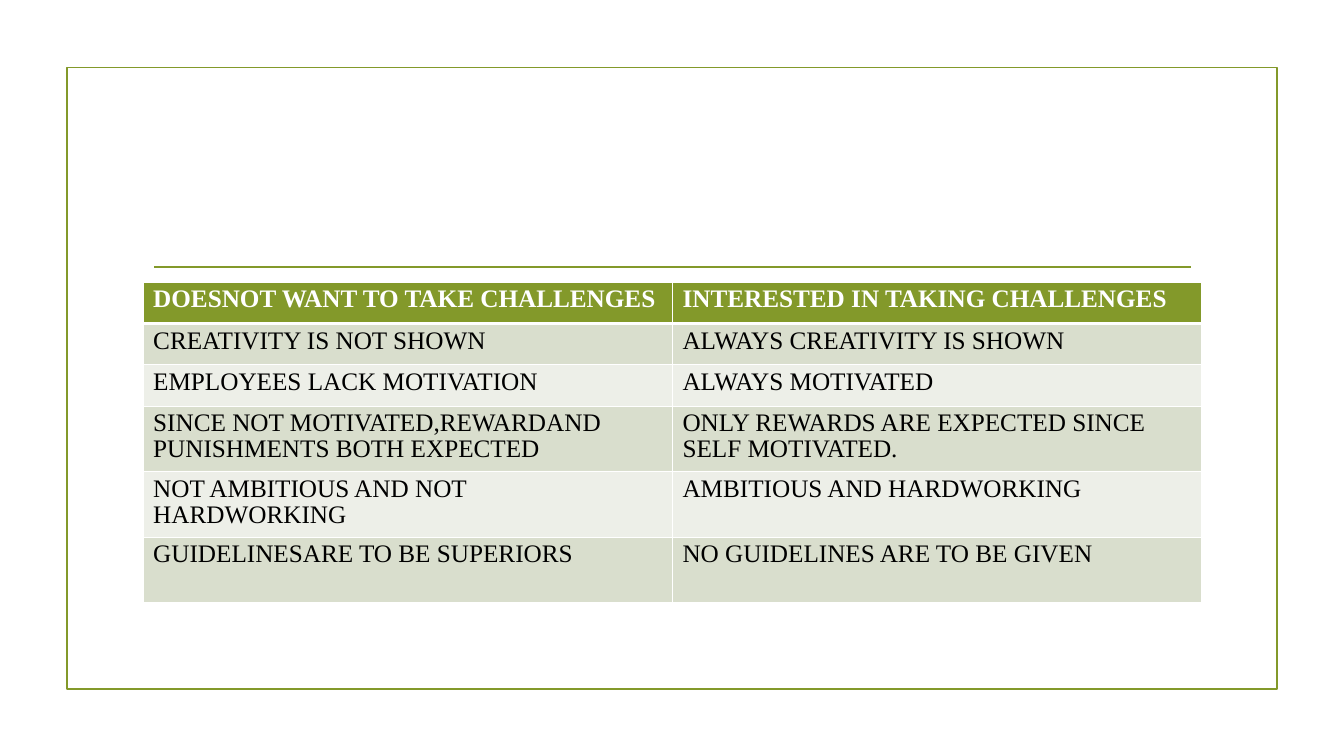
import dataclasses

import pptx
import pptx.dml.color
import pptx.enum.shapes
import pptx.oxml
import pptx.oxml.ns
import pptx.util

FONT = "Times New Roman"
GREEN, WHITE, BLACK = "83992A", "FFFFFF", "000000"
BANDS = ("D9DECD", "EDEFE8")
WIDTH, HEIGHT = pptx.util.Inches(13.33), pptx.util.Inches(7.5)
COLUMN = pptx.util.Inches(5.25)
SINGLE, DOUBLE = pptx.util.Inches(0.41), pptx.util.Inches(0.65)


@dataclasses.dataclass
class Contrast:
    left: str
    right: str
    height: int = SINGLE


CONTRASTS = [
    Contrast("DOESNOT WANT TO TAKE CHALLENGES", "INTERESTED IN TAKING CHALLENGES"),
    Contrast("CREATIVITY IS NOT SHOWN", "ALWAYS CREATIVITY IS SHOWN"),
    Contrast("EMPLOYEES LACK MOTIVATION", "ALWAYS MOTIVATED"),
    Contrast("SINCE NOT MOTIVATED,REWARDAND PUNISHMENTS BOTH EXPECTED",
             "ONLY REWARDS ARE EXPECTED SINCE SELF MOTIVATED.", DOUBLE),
    Contrast("NOT AMBITIOUS AND NOT HARDWORKING", "AMBITIOUS AND HARDWORKING", DOUBLE),
    Contrast("GUIDELINESARE TO BE SUPERIORS", "NO GUIDELINES ARE TO BE GIVEN", DOUBLE),
]


def rgb(value: str) -> pptx.dml.color.RGBColor:
    return pptx.dml.color.RGBColor.from_string(value)


def x(share: float) -> int:
    """Turn a percentage of the slide width into a length."""
    return round(WIDTH * share / 100)


def y(share: float) -> int:
    """Turn a percentage of the slide height into a length."""
    return round(HEIGHT * share / 100)


def style_line(line) -> None:
    line.color.rgb = rgb(GREEN)
    line.width = pptx.util.Pt(1.25)


def add_frame(s) -> None:
    sp = s.shapes.add_shape(pptx.enum.shapes.MSO_SHAPE.RECTANGLE,
                            x(4.98), y(8.93), x(90.02), y(82.27))
    sp.shadow.inherit = False
    sp.fill.background()
    style_line(sp.line)


def add_title_rule(s) -> None:
    rule = s.shapes.add_connector(pptx.enum.shapes.MSO_CONNECTOR.STRAIGHT,
                                  x(11.48), y(35.33), x(88.6), y(35.33))
    style_line(rule.line)
    rule._element.spPr.append(pptx.oxml.parse_xml(
        f"<a:effectLst {pptx.oxml.ns.nsdecls('a')}/>"))


def set_borders(cell, bottom: float) -> None:
    """Draw white cell borders, with the bottom one of the given points."""
    tc_pr = cell._tc.get_or_add_tcPr()
    for i, (side, points) in enumerate(zip("LRTB", (1, 1, 1, bottom))):
        tc_pr.insert(i, pptx.oxml.parse_xml(
            f'<a:ln{side} {pptx.oxml.ns.nsdecls("a")} w="{pptx.util.Pt(points)}">'
            f'<a:solidFill><a:srgbClr val="{WHITE}"/></a:solidFill></a:ln{side}>'))


def fill_cell(cell, text: str, row: int) -> None:
    header = row == 0
    cell.fill.solid()
    cell.fill.fore_color.rgb = rgb(GREEN if header else BANDS[(row - 1) % 2])
    set_borders(cell, 3 if header else 1)
    cell.text_frame.text = text
    p = cell.text_frame.paragraphs[0]
    p.line_spacing = 0.93
    font = p.runs[0].font
    font.name, font.size, font.bold = FONT, pptx.util.Pt(18), header
    font.color.rgb = rgb(WHITE if header else BLACK)


def add_contrast_table(s) -> None:
    table = s.shapes.add_table(len(CONTRASTS), 2, x(10.65), y(37.33), 2 * COLUMN,
                               sum(c.height for c in CONTRASTS)).table
    for column in table.columns:
        column.width = COLUMN
    for i, contrast in enumerate(CONTRASTS):
        table.rows[i].height = contrast.height
        for j, text in enumerate((contrast.left, contrast.right)):
            fill_cell(table.cell(i, j), text, i)


def main() -> None:
    prs = pptx.Presentation()
    prs.slide_width, prs.slide_height = WIDTH, HEIGHT
    s = prs.slides.add_slide(prs.slide_layouts[6])
    add_frame(s)
    add_title_rule(s)
    add_contrast_table(s)
    prs.save("out.pptx")


if __name__ == "__main__":
    main()
